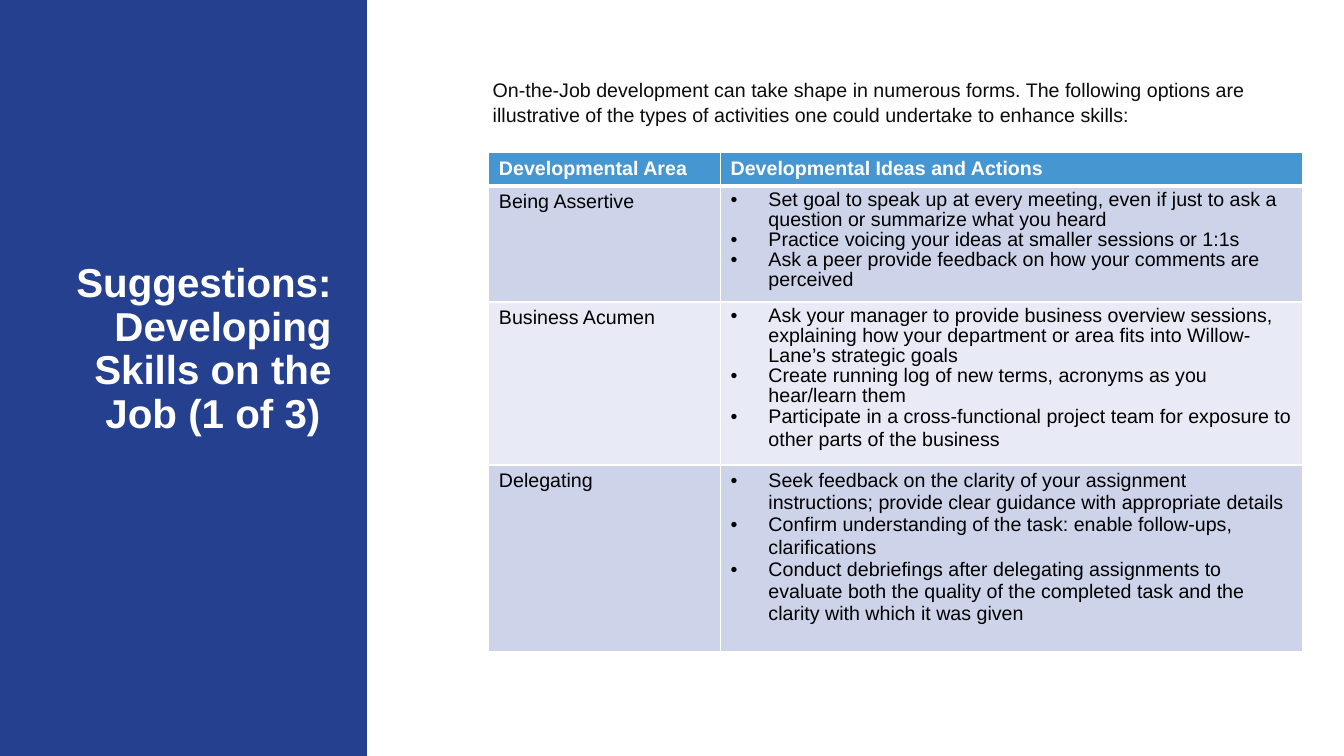
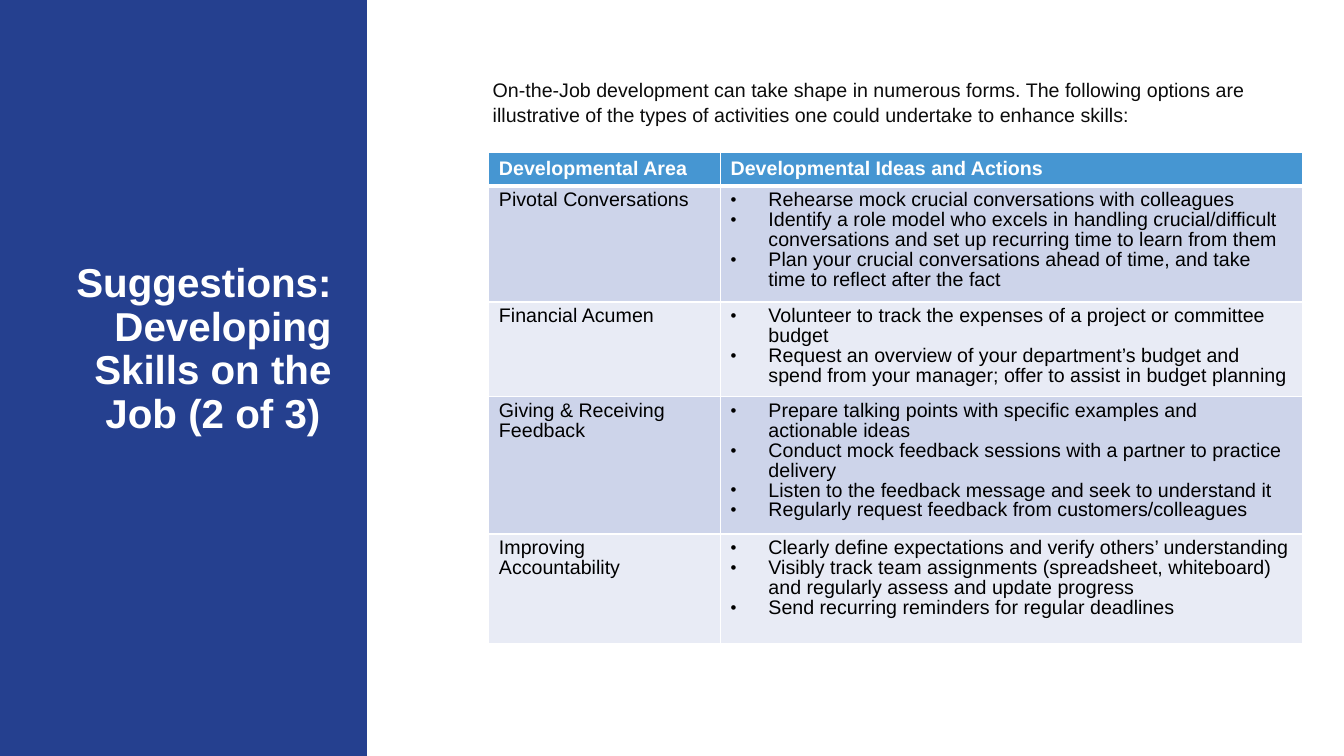
from dataclasses import dataclass

from lxml.etree import SubElement
from pptx import Presentation
from pptx.dml.color import RGBColor
from pptx.enum.shapes import MSO_SHAPE
from pptx.enum.text import MSO_ANCHOR, PP_ALIGN
from pptx.oxml import parse_xml
from pptx.oxml.ns import nsdecls, qn
from pptx.util import Pt


@dataclass(frozen=True)
class Theme:
    font: str = "Arial"
    band: str = "25408F"
    head: str = "4696D2"
    odd: str = "CDD4EA"
    even: str = "E8EBF5"
    white: str = "FFFFFF"
    black: str = "000000"
    ink: str = "0C0C0C"
    title: float = 28.8
    text: float = 14
    tight: float = 0.9


LOOK = Theme()
INTRO = ("On-the-Job development can take shape in numerous forms. The following options "
         "are illustrative of the types of activities one could undertake to enhance skills:")
HEADS = ("Developmental Area", "Developmental Ideas and Actions")

# Each row: area, height, tightly spaced ideas, normally spaced ideas
FIRST = [
    ("Being Assertive", 78, [
        "Set goal to speak up at every meeting, even if just to ask a question "
        "or summarize what you heard",
        "Practice voicing your ideas at smaller sessions or 1:1s",
        "Ask a peer provide feedback on how your comments are perceived"], []),
    ("Business Acumen", 110, [
        "Ask your manager to provide business overview sessions, explaining how your "
        "department or area fits into Willow-Lane’s strategic goals",
        "Create running log of new terms, acronyms as you hear/learn them"], [
        "Participate in a cross-functional project team for exposure to other parts "
        "of the business"]),
    ("Delegating", 133, [], [
        "Seek feedback on the clarity of your assignment instructions; provide clear "
        "guidance with appropriate details",
        "Confirm understanding of the task: enable follow-ups, clarifications",
        "Conduct debriefings after delegating assignments to evaluate both the quality "
        "of the completed task and the clarity with which it was given"]),
]
SECOND = [
    ("Pivotal Conversations", 78, [
        "Rehearse mock crucial conversations with colleagues",
        "Identify a role model who excels in handling crucial/difficult conversations "
        "and set up recurring time to learn from them",
        "Plan your crucial conversations ahead of time, and take time to reflect "
        "after the fact"], []),
    ("Financial Acumen", 64, [
        "Volunteer to track the expenses of a project or committee budget",
        "Request an overview of your department’s budget and spend from your manager; "
        "offer to assist in budget planning"], []),
    ("Giving & Receiving Feedback", 93, [
        "Prepare talking points with specific examples and actionable ideas",
        "Conduct mock feedback sessions with a partner to practice delivery",
        "Listen to the feedback message and seek to understand it",
        "Regularly request feedback from customers/colleagues"], []),
    ("Improving Accountability", 78, [
        "Clearly define expectations and verify others’ understanding",
        "Visibly track team assignments (spreadsheet, whiteboard) and regularly assess "
        "and update progress",
        "Send recurring reminders for regular deadlines"], []),
]


def put(item, form):
    for name, value in form.items():
        setattr(item, name, value)


def write(para, text, color, size=LOOK.text, bold=False, **form):
    run = para.add_run()
    run.text = text
    put(run.font, {"name": LOOK.font, "size": Pt(size), "bold": bold})
    run.font.color.rgb = RGBColor.from_string(color)
    put(para, form)


def add_text(slide, box, text, color, frame, **form):
    area = slide.shapes.add_textbox(*map(Pt, box)).text_frame
    put(area, {"word_wrap": True, **frame})
    write(area.paragraphs[0], text, color, **form)


def add_band(slide):
    band = slide.shapes.add_shape(MSO_SHAPE.RECTANGLE, 0, 0, Pt(262), Pt(540))
    band.shadow.inherit = False
    band.fill.solid()
    band.fill.fore_color.rgb = RGBColor.from_string(LOOK.band)
    band.line.fill.background()


def add_dot(para, scale):
    props = para._p.get_or_add_pPr()
    props.set("marL", str(Pt(27)))
    props.set("indent", str(-Pt(27)))
    color = SubElement(props, qn("a:buClr"))
    SubElement(color, qn("a:srgbClr"), val=LOOK.black)
    SubElement(props, qn("a:buSzPct"), val=str(scale * 1000))
    SubElement(props, qn("a:buFont"), typeface=LOOK.font)
    SubElement(props, qn("a:buChar"), char="•")


def paint(cell, color, top=1, base=1):
    cell.fill.solid()
    cell.fill.fore_color.rgb = RGBColor.from_string(color)
    # Borders come before the fill in the cell's properties
    props = cell._tc.get_or_add_tcPr()
    for spot, (side, width) in enumerate(zip("LRTB", (1, 1, top, base))):
        props.insert(spot, parse_xml(
            f'<a:ln{side} {nsdecls("a")} w="{Pt(width)}"><a:solidFill>'
            f'<a:srgbClr val="{LOOK.white}"/></a:solidFill></a:ln{side}>'))


def add_ideas(frame, tight, loose, scale):
    ideas = [(text, LOOK.tight) for text in tight] + [(text, 1.0) for text in loose]
    for place, (text, gap) in enumerate(ideas):
        para = frame.add_paragraph() if place else frame.paragraphs[0]
        write(para, text, LOOK.black, line_spacing=gap)
        add_dot(para, scale)


def add_grid(slide, rows, gap, scale):
    tall = [23] + [row[1] for row in rows]
    box = map(Pt, (349.2, 108.7, 581, sum(tall)))
    grid = slide.shapes.add_table(len(tall), 2, *box).table
    put(grid, {"first_row": False, "horz_banding": False})
    for column, width in zip(grid.columns, (165.5, 415.5)):
        column.width = Pt(width)
    for row, height in zip(grid.rows, tall):
        row.height = Pt(height)
    # Header
    for cell, text in zip(grid.rows[0].cells, HEADS):
        paint(cell, LOOK.head, base=3)
        write(cell.text_frame.paragraphs[0], text, LOOK.white, bold=True)
    # Body
    for place, (area, _, tight, loose) in enumerate(rows, 1):
        left, right = grid.rows[place].cells
        for cell in (left, right):
            paint(cell, LOOK.odd if place % 2 else LOOK.even, top=3 if place == 1 else 1)
        write(left.text_frame.paragraphs[0], area, LOOK.black, line_spacing=gap)
        add_ideas(right.text_frame, tight, loose, scale)


def add_page(deck, number, rows, gap, scale):
    slide = deck.slides.add_slide(deck.slide_layouts[6])
    add_band(slide)
    add_text(slide, (18, 198, 226, 104),
             f"Suggestions: Developing Skills on the Job ({number} of 3) ", LOOK.white,
             {"vertical_anchor": MSO_ANCHOR.MIDDLE}, size=LOOK.title, bold=True,
             alignment=PP_ALIGN.RIGHT, line_spacing=LOOK.tight)
    add_grid(slide, rows, gap, scale)
    add_text(slide, (336, 51, 606, 42), INTRO, LOOK.ink,
             {"margin_left": Pt(16)}, line_spacing=1.07)


def main():
    deck = Presentation()
    put(deck, {"slide_width": Pt(960), "slide_height": Pt(540)})
    add_page(deck, 1, FIRST, 1.0, 100)
    add_page(deck, 2, SECOND, LOOK.tight, 86)
    deck.save("out.pptx")


if __name__ == "__main__":
    main()
